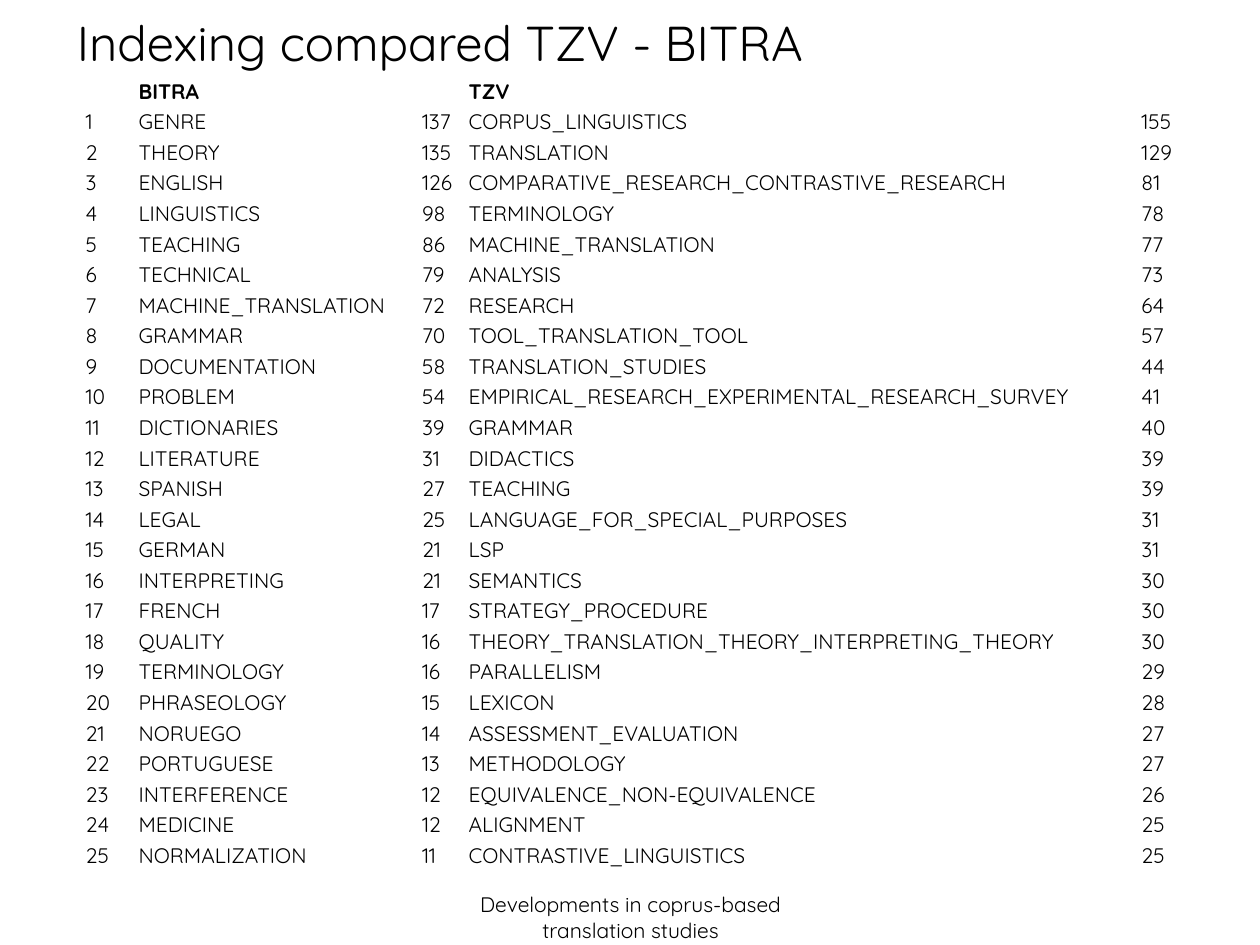
from pptx import Presentation
from pptx.dml.color import RGBColor
from pptx.enum.shapes import MSO_SHAPE
from pptx.enum.text import MSO_ANCHOR, PP_ALIGN
from pptx.util import Inches, Pt

FONT = "Quicksand"
BLACK = RGBColor(0x00, 0x00, 0x00)
WHITE = RGBColor(0xFF, 0xFF, 0xFF)

# Content
TITLE = "Indexing compared TZV - BITRA"
FOOTER = "Developments in coprus-based translation studies"
HEADER = ("", "BITRA", "", "TZV", "")
RANKING = [
    ("GENRE", 137, "CORPUS_LINGUISTICS", 155),
    ("THEORY", 135, "TRANSLATION", 129),
    ("ENGLISH", 126, "COMPARATIVE_RESEARCH_CONTRASTIVE_RESEARCH", 81),
    ("LINGUISTICS", 98, "TERMINOLOGY", 78),
    ("TEACHING", 86, "MACHINE_TRANSLATION", 77),
    ("TECHNICAL", 79, "ANALYSIS", 73),
    ("MACHINE_TRANSLATION", 72, "RESEARCH", 64),
    ("GRAMMAR", 70, "TOOL_TRANSLATION_TOOL", 57),
    ("DOCUMENTATION", 58, "TRANSLATION_STUDIES", 44),
    ("PROBLEM", 54, "EMPIRICAL_RESEARCH_EXPERIMENTAL_RESEARCH_SURVEY", 41),
    ("DICTIONARIES", 39, "GRAMMAR", 40),
    ("LITERATURE", 31, "DIDACTICS", 39),
    ("SPANISH", 27, "TEACHING", 39),
    ("LEGAL", 25, "LANGUAGE_FOR_SPECIAL_PURPOSES", 31),
    ("GERMAN", 21, "LSP", 31),
    ("INTERPRETING", 21, "SEMANTICS", 30),
    ("FRENCH", 17, "STRATEGY_PROCEDURE", 30),
    ("QUALITY", 16, "THEORY_TRANSLATION_THEORY_INTERPRETING_THEORY", 30),
    ("TERMINOLOGY", 16, "PARALLELISM", 29),
    ("PHRASEOLOGY", 15, "LEXICON", 28),
    ("NORUEGO", 14, "ASSESSMENT_EVALUATION", 27),
    ("PORTUGUESE", 13, "METHODOLOGY", 27),
    ("INTERFERENCE", 12, "EQUIVALENCE_NON-EQUIVALENCE", 26),
    ("MEDICINE", 12, "ALIGNMENT", 25),
    ("NORMALIZATION", 11, "CONTRASTIVE_LINGUISTICS", 25),
]
COL_WIDTHS = (0.42, 2.25, 0.37, 5.34, 0.43)
TABLE_HEIGHT, HEADER_HEIGHT = 6.3, 0.23


def write(tf, text, size=12, bold=False, align=PP_ALIGN.LEFT):
    p = tf.paragraphs[0]
    p.alignment = align
    # Paragraph font keeps empty cells from growing their row
    fonts = [p.font]
    if text:
        r = p.add_run()
        r.text = text
        fonts.append(r.font)
    for font in fonts:
        font.name, font.size, font.bold = FONT, Pt(size), bold
        font.color.rgb = BLACK


prs = Presentation()
prs.slide_width, prs.slide_height = Inches(10), Inches(7.5)
s = prs.slides.add_slide(prs.slide_layouts[5])

# Title
title = s.shapes.title
title.left, title.top = Inches(0.51), Inches(0.13)
title.width, title.height = Inches(9), Inches(0.4)
title.text_frame.vertical_anchor = MSO_ANCHOR.MIDDLE
write(title.text_frame, TITLE, size=28)

# Footer
footer = s.shapes.add_textbox(Inches(3.42), Inches(7.03), Inches(3.17), Inches(0.35))
footer.text_frame.word_wrap = True
write(footer.text_frame, FOOTER, align=PP_ALIGN.CENTER)

# White panel behind the table
panel = s.shapes.add_shape(MSO_SHAPE.RECTANGLE, Inches(7.05), Inches(3.04),
                           Inches(2.36), Inches(3.78))
panel.shadow.inherit = False
panel.fill.solid()
panel.fill.fore_color.rgb = WHITE
panel.line.color.rgb = WHITE
panel.line.width = Pt(2)

# Ranking table
rows = [HEADER] + [(rank, *entry) for rank, entry in enumerate(RANKING, 1)]
table = s.shapes.add_table(len(rows), len(COL_WIDTHS), Inches(0.67), Inches(0.6),
                           Inches(sum(COL_WIDTHS)), Inches(TABLE_HEIGHT)).table
table.first_row = table.horz_banding = False
for column, width in zip(table.columns, COL_WIDTHS):
    column.width = Inches(width)
row_height = (TABLE_HEIGHT - HEADER_HEIGHT) / len(RANKING)
for i, values in enumerate(rows):
    table.rows[i].height = Inches(row_height if i else HEADER_HEIGHT)
    for j, value in enumerate(values):
        cell = table.cell(i, j)
        cell.fill.background()
        cell.vertical_anchor = MSO_ANCHOR.BOTTOM
        cell.margin_left = cell.margin_right = cell.margin_top = Inches(0.01)
        cell.margin_bottom = 0
        write(cell.text_frame, str(value), bold=i == 0)

prs.save("out.pptx")
